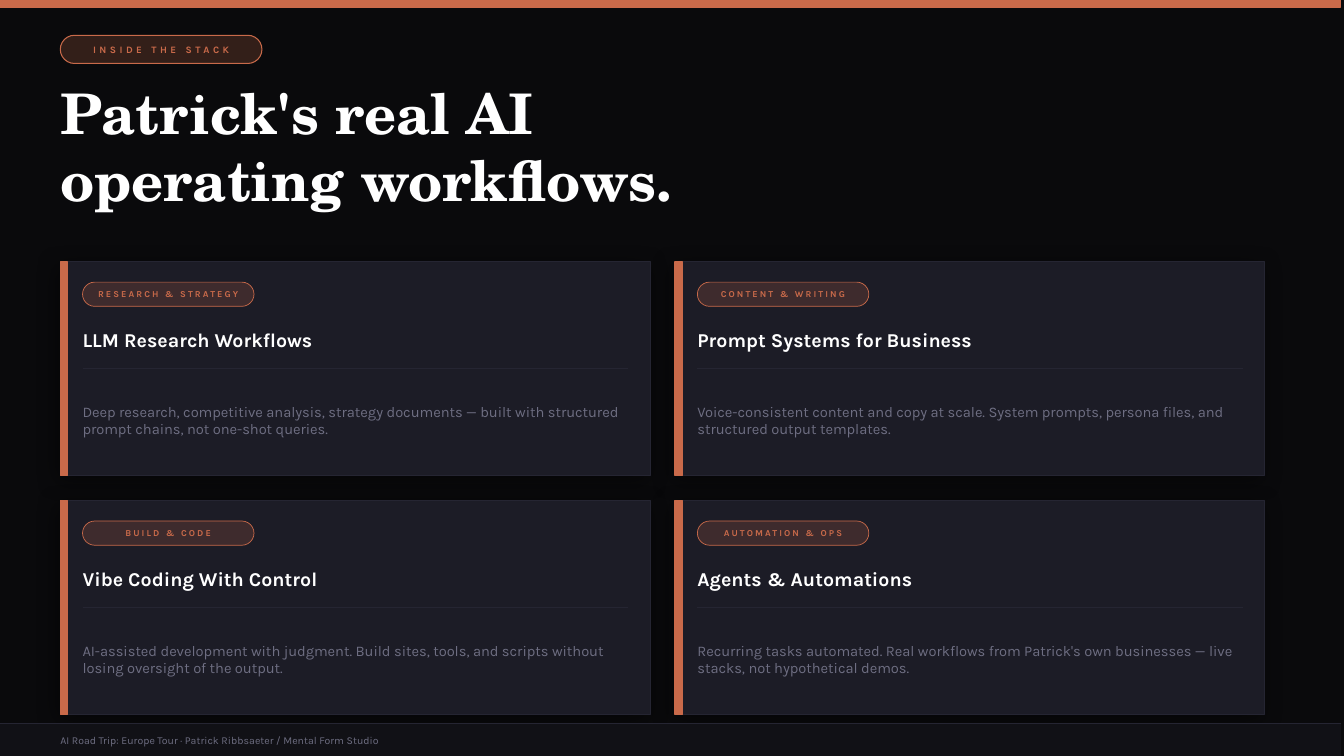
from lxml import etree
from pptx import Presentation
from pptx.dml.color import RGBColor
from pptx.enum.shapes import MSO_CONNECTOR, MSO_SHAPE
from pptx.enum.text import MSO_ANCHOR, PP_ALIGN
from pptx.oxml.ns import qn
from pptx.util import Cm, Pt

RECTANGLE, PILL = MSO_SHAPE.RECTANGLE, MSO_SHAPE.ROUNDED_RECTANGLE
STRAIGHT = MSO_CONNECTOR.STRAIGHT
TOP, MIDDLE = MSO_ANCHOR.TOP, MSO_ANCHOR.MIDDLE
LEFT, CENTER = PP_ALIGN.LEFT, PP_ALIGN.CENTER

SECTION = "INSIDE THE STACK"
TITLE = ["Patrick's real AI", "operating workflows."]
CARDS = [
    ("RESEARCH & STRATEGY", "LLM Research Workflows",
     "Deep research, competitive analysis, strategy documents — built with "
     "structured prompt chains, not one-shot queries."),
    ("CONTENT & WRITING", "Prompt Systems for Business",
     "Voice-consistent content and copy at scale. System prompts, persona "
     "files, and structured output templates."),
    ("BUILD & CODE", "Vibe Coding With Control",
     "AI-assisted development with judgment. Build sites, tools, and scripts "
     "without losing oversight of the output."),
    ("AUTOMATION & OPS", "Agents & Automations",
     "Recurring tasks automated. Real workflows from Patrick's own businesses "
     "— live stacks, not hypothetical demos."),
]
FOOTER = "AI Road Trip: Europe Tour · Patrick Ribbsaeter / Mental Form Studio"

BODY_FONT, TITLE_FONT = "Karla", "TeX Gyre Schola"
BACKGROUND, CARD, FOOTER_FILL = "0A0A0C", "1C1C26", "111116"
ACCENT, RULE, WHITE, MUTED = "C96A4A", "252532", "FFFFFF", "6E6E82"

SLIDE_WIDTH, SLIDE_HEIGHT, BAND_WIDTH = 33.86, 19.05, 33.78
MARGIN, BAR = 1.52, 0.18
CARD_TOP, CARD_WIDTH, CARD_HEIGHT = 6.6, 14.86, 5.38
COLUMN_STEP, ROW_STEP = 15.49, 6.02
INDENT, INNER_WIDTH, RULE_WIDTH = 0.56, 13.79, 13.74
FOOTER_TOP, FOOTER_HEIGHT = 18.24, 0.81


def color(value):
    return RGBColor.from_string(value)


def add_box(slide, kind, left, top, width, height, fill, line, weight):
    shape = slide.shapes.add_shape(kind, Cm(left), Cm(top), Cm(width), Cm(height))
    shape.shadow.inherit = False
    shape.fill.solid()
    shape.fill.fore_color.rgb = color(fill)
    shape.line.color.rgb = color(line)
    shape.line.width = Pt(weight)
    return shape


def add_shadow(shape):
    effects = shape._element.spPr.find(qn("a:effectLst"))
    shadow = etree.SubElement(effects, qn("a:outerShdw"), blurRad=str(Pt(16)),
                              dist=str(Pt(4)), dir="8100000", algn="bl", rotWithShape="0")
    black = etree.SubElement(shadow, qn("a:srgbClr"), val="000000")
    etree.SubElement(black, qn("a:alpha"), val="45000")


def write(shape, lines, size, text_color, bold=False, font=BODY_FONT,
          align=LEFT, anchor=MIDDLE, spacing=0):
    frame = shape.text_frame
    frame.word_wrap = True
    frame.vertical_anchor = anchor
    frame.margin_left = frame.margin_top = frame.margin_right = frame.margin_bottom = 0
    for index, line in enumerate(lines):
        paragraph = frame.add_paragraph() if index else frame.paragraphs[0]
        paragraph.alignment = align
        run = paragraph.add_run()
        run.text = line
        if spacing:
            run._r.get_or_add_rPr().set("spc", str(round(spacing * 100)))
        paragraph.font.name = font
        paragraph.font.size = Pt(size)
        paragraph.font.bold = bold
        paragraph.font.color.rgb = color(text_color)


def add_text(slide, left, top, width, height, lines, size, text_color, **style):
    box = slide.shapes.add_textbox(Cm(left), Cm(top), Cm(width), Cm(height))
    write(box, lines, size, text_color, **style)


def add_pill(slide, left, top, width, height, text, size, spacing, opacity, weight):
    pill = add_box(slide, PILL, left, top, width, height, ACCENT, ACCENT, weight)
    pill.adjustments[0] = 0.5
    fill = pill._element.spPr.find(qn("a:solidFill"))
    etree.SubElement(fill[0], qn("a:alpha"), val=str(opacity * 1000))
    write(pill, [text], size, ACCENT, bold=True, align=CENTER, spacing=spacing)


def add_rule(slide, left, top, width, weight):
    rule = slide.shapes.add_connector(STRAIGHT, Cm(left), Cm(top), Cm(left + width), Cm(top))
    rule.line.color.rgb = color(RULE)
    rule.line.width = Pt(weight)
    etree.SubElement(rule._element.spPr, qn("a:effectLst"))


def add_card(slide, left, top, tag, heading, body):
    inner = left + INDENT
    add_shadow(add_box(slide, RECTANGLE, left, top, CARD_WIDTH, CARD_HEIGHT, CARD, RULE, 0.75))
    add_box(slide, RECTANGLE, left, top, BAR, CARD_HEIGHT, ACCENT, ACCENT, 1)
    add_pill(slide, inner, top + 0.51, 4.32, 0.61, tag, 6.5, 1.5, 20, 0.5)
    add_text(slide, inner, top + 1.4, INNER_WIDTH, 1.14, [heading], 14, WHITE, bold=True)
    add_rule(slide, inner, top + 2.69, RULE_WIDTH, 0.75)
    add_text(slide, inner, top + 3, INNER_WIDTH, 1.98, [body], 10.5, MUTED)


def main():
    """Build the workflow overview slide and save it."""
    presentation = Presentation()
    presentation.slide_width, presentation.slide_height = Cm(SLIDE_WIDTH), Cm(SLIDE_HEIGHT)
    slide = presentation.slides.add_slide(presentation.slide_layouts[6])
    slide.background.fill.solid()
    slide.background.fill.fore_color.rgb = color(BACKGROUND)

    add_box(slide, RECTANGLE, 0, 0, BAND_WIDTH, BAR, ACCENT, ACCENT, 1)
    add_pill(slide, MARGIN, 0.89, 5.08, 0.71, SECTION, 7, 2.5, 22, 0.75)
    add_text(slide, MARGIN, 1.98, 21.59, 4.06, TITLE, 40, WHITE,
             bold=True, font=TITLE_FONT, anchor=TOP)

    for index, card in enumerate(CARDS):
        row, column = divmod(index, 2)
        add_card(slide, MARGIN + column * COLUMN_STEP, CARD_TOP + row * ROW_STEP, *card)

    add_box(slide, RECTANGLE, 0, FOOTER_TOP, BAND_WIDTH, FOOTER_HEIGHT,
            FOOTER_FILL, FOOTER_FILL, 1)
    add_rule(slide, 0, FOOTER_TOP, BAND_WIDTH, 0.5)
    add_text(slide, MARGIN, FOOTER_TOP, 30.73, FOOTER_HEIGHT, [FOOTER], 7.5, MUTED)
    presentation.save("out.pptx")


if __name__ == "__main__":
    main()
